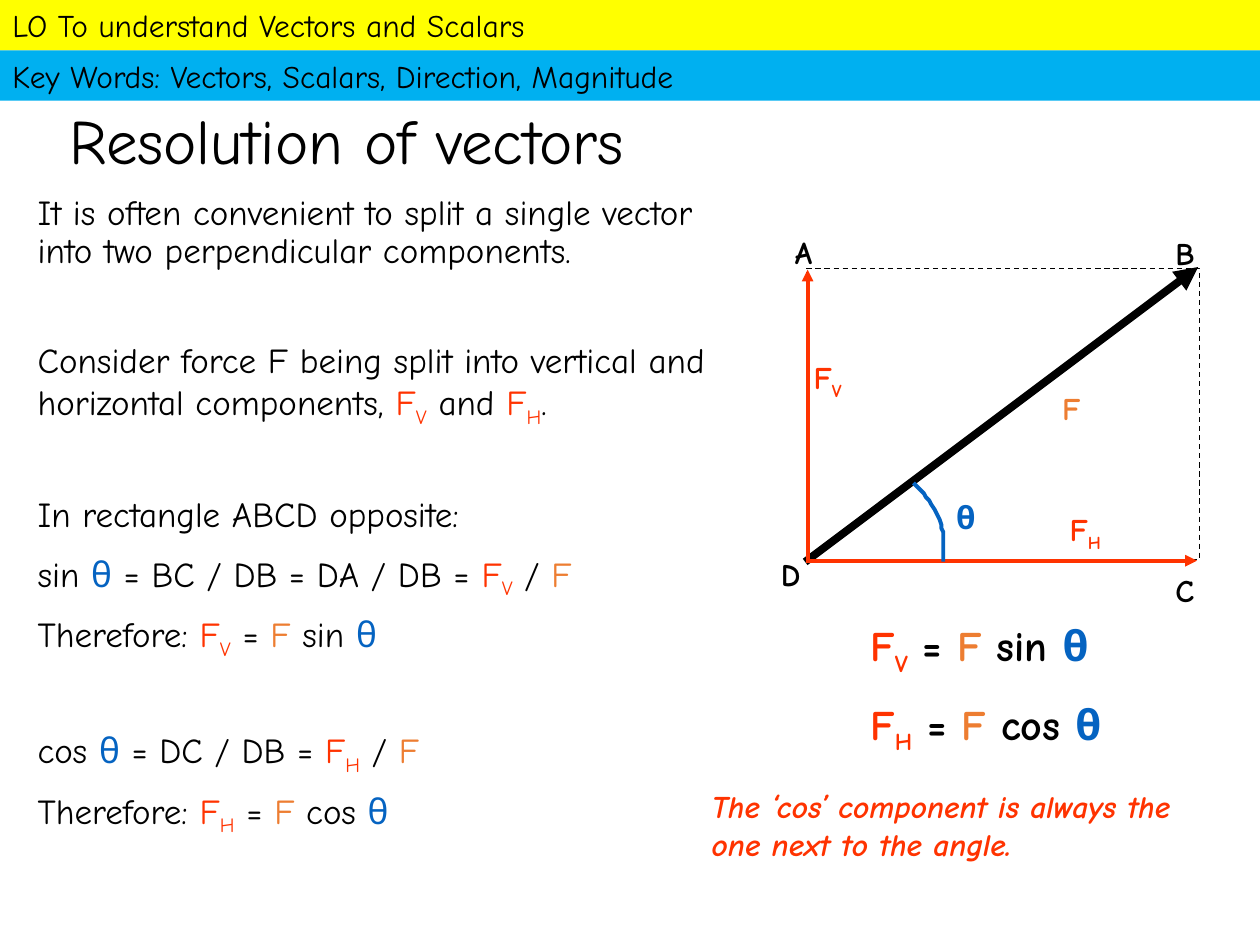
from dataclasses import dataclass
from typing import NamedTuple

import lxml.etree
import pptx
import pptx.dml.color
import pptx.enum.dml
import pptx.enum.shapes
import pptx.enum.text
import pptx.oxml.ns
import pptx.util

Pt = pptx.util.Pt


@dataclass(frozen=True)
class Theme:
    font: str = "Comic Neue"
    black: str = "000000"
    component: str = "FF3300"
    force: str = "ED7D31"
    angle: str = "0563C1"
    objective: str = "FFFF00"
    keywords: str = "00B0F0"
    title_size: float = 36
    formula_size: float = 24
    body_size: float = 20
    label_size: float = 18


THEME = Theme()


class Run(NamedTuple):
    text: str
    color: str = THEME.black
    sub: bool = False


class Para(NamedTuple):
    runs: list[Run]
    before: float = 0


class Box(NamedTuple):
    left: float
    top: float
    width: float
    height: float


class Arrow(NamedTuple):
    start: tuple[float, float]
    end: tuple[float, float]
    color: str
    width: float


class Label(NamedTuple):
    runs: list[Run]
    left: float
    top: float
    width: float


# Symbols shared by the text, the diagram and the formulas
F = Run("F", THEME.force)
THETA = Run("θ", THEME.angle)
F_V = [Run("F", THEME.component), Run("V", THEME.component, sub=True)]
F_H = [Run("F", THEME.component), Run("H", THEME.component, sub=True)]
EQUALS, SLASH = Run(" = "), Run(" / ")


def rgb(color: str):
    return pptx.dml.color.RGBColor.from_string(color)


def write(tf, paras: list[Para], size: float, bold: bool = False,
          italic: bool = False, spacing: float = 1.0) -> None:
    tf.word_wrap = True
    for i, para in enumerate(paras):
        p = tf.paragraphs[0] if i == 0 else tf.add_paragraph()
        p.alignment = pptx.enum.text.PP_ALIGN.LEFT
        p.line_spacing = spacing
        p.space_before = Pt(para.before)
        for run in para.runs:
            r = p.add_run()
            r.text = run.text
            r.font.name, r.font.size = THEME.font, Pt(size)
            r.font.bold, r.font.italic = bold, italic
            r.font.color.rgb = rgb(run.color)
            if run.sub:
                r._r.get_or_add_rPr().set("baseline", "-25000")


def add_text(s, box: Box, paras: list[Para], size: float, **style) -> None:
    write(s.shapes.add_textbox(*map(Pt, box)).text_frame, paras, size, **style)


def add_banner(s, top: float, fill: str, text: str) -> None:
    sp = s.shapes.add_shape(pptx.enum.shapes.MSO_SHAPE.RECTANGLE,
                            Pt(0), Pt(top), Pt(720), Pt(28.8))
    sp.shadow.inherit = False
    sp.fill.solid()
    sp.fill.fore_color.rgb = rgb(fill)
    sp.line.fill.background()
    sp.text_frame.vertical_anchor = pptx.enum.text.MSO_ANCHOR.TOP
    write(sp.text_frame, [Para([Run(text)])], THEME.label_size)


def add_arrow(s, arrow: Arrow) -> None:
    sp = s.shapes.add_connector(pptx.enum.shapes.MSO_CONNECTOR.STRAIGHT,
                                *map(Pt, arrow.start + arrow.end))
    sp.line.color.rgb = rgb(arrow.color)
    sp.line.width = Pt(arrow.width)
    qn = pptx.oxml.ns.qn
    lxml.etree.SubElement(sp.line._get_or_add_ln(), qn("a:tailEnd"), type="triangle")
    lxml.etree.SubElement(sp._element.spPr, qn("a:effectLst"))


def bezier(points, steps: int = 10) -> list[tuple[float, float]]:
    """Points along a cubic curve, without its start."""
    def at(t: float, axis: int) -> float:
        a, b, c, d = (pt[axis] for pt in points)
        u = 1 - t
        return u**3 * a + 3 * u * u * t * b + 3 * u * t * t * c + t**3 * d
    return [(at(i / steps, 0), at(i / steps, 1)) for i in range(1, steps + 1)]


def add_angle_arc(s) -> None:
    start, middle, end = (522, 276.5), (537.1, 297.4), (538.6, 321.1)
    points = (bezier([start, (528.5, 283), (534.2, 289.4), middle])
              + bezier([middle, (540, 304.6), (539.3, 312.5), end]))
    builder = s.shapes.build_freeform(*start, scale=Pt(1))
    builder.add_line_segments(points, close=False)
    sp = builder.convert_to_shape()
    sp.shadow.inherit = False
    sp.fill.background()
    sp.line.color.rgb = rgb(THEME.angle)
    sp.line.width = Pt(2.25)


def add_diagram(s) -> None:
    add_arrow(s, Arrow((460.1, 321.1), (684.7, 152.6), THEME.black, 4.5))
    # Rectangle ABCD
    sp = s.shapes.add_shape(pptx.enum.shapes.MSO_SHAPE.RECTANGLE,
                            *map(Pt, (460.8, 153.4, 224.6, 166.3)))
    sp.shadow.inherit = False
    sp.fill.background()
    sp.line.color.rgb = rgb(THEME.black)
    sp.line.width = Pt(0.75)
    sp.line.dash_style = pptx.enum.dml.MSO_LINE.DASH
    # Components and angle
    add_arrow(s, Arrow((461.5, 319.7), (461.5, 154.1), THEME.component, 2.25))
    add_arrow(s, Arrow((460.8, 320.4), (684, 320.4), THEME.component, 2.25))
    add_angle_arc(s)
    labels = [
        Label([F], 599.8, 218.9, 37.4), Label(F_V, 457.9, 200.9, 43.2),
        Label(F_H, 604.1, 288, 43.2), Label([THETA], 539.3, 280.8, 59.8),
        Label([Run("C")], 664.6, 322.6, 36), Label([Run("B")], 664.6, 130.3, 36),
        Label([Run("A")], 447.1, 129.6, 36), Label([Run("D")], 439.2, 313.9, 36),
    ]
    for label in labels:
        add_text(s, Box(label.left, label.top, label.width, 28.8),
                 [Para(label.runs)], THEME.label_size, bold=True)


def main() -> None:
    prs = pptx.Presentation()
    prs.slide_width, prs.slide_height = Pt(720), Pt(540)
    s = prs.slides.add_slide(prs.slide_layouts[5])

    # Banners and title
    add_banner(s, 0, THEME.objective, "LO To understand Vectors and Scalars")
    add_banner(s, 28.8, THEME.keywords,
               "Key Words: Vectors, Scalars, Direction, Magnitude")
    title = s.shapes.title
    title.left, title.top, title.width, title.height = map(Pt, (32.4, 49, 653, 67))
    title.text_frame.vertical_anchor = pptx.enum.text.MSO_ANCHOR.MIDDLE
    write(title.text_frame, [Para([Run("Resolution of vectors")])],
          THEME.title_size, spacing=0.9)

    # Explanation; a new section starts after a wide gap
    gap, section = 10, 41.7
    therefore = Run("Therefore: ")
    add_text(s, Box(14.4, 108, 407.5, 388.8), [
        Para([Run("It is often convenient to split a single vector into two "
                  "perpendicular components.")]),
        Para([Run("Consider force F being split into vertical and horizontal "
                  "components, "), *F_V, Run(" and "), *F_H, Run(".")], section),
        Para([Run("In rectangle ABCD opposite:")], section),
        Para([Run("sin "), THETA, Run(" = BC / DB = DA / DB = "), *F_V, SLASH, F], gap),
        Para([therefore, *F_V, EQUALS, F, Run(" sin "), THETA], gap),
        Para([Run("cos "), THETA, Run(" = DC / DB = "), *F_H, SLASH, F], section),
        Para([therefore, *F_H, EQUALS, F, Run(" cos "), THETA], gap),
    ], THEME.body_size, spacing=0.9)

    add_diagram(s)

    # Results
    add_text(s, Box(490.3, 350.6, 162, 108.7), [
        Para([*F_V, EQUALS, F, Run(" sin "), THETA]),
        Para([*F_H, EQUALS, F, Run(" cos "), THETA], 12),
    ], THEME.formula_size, bold=True)
    add_text(s, Box(399.6, 446.4, 293.8, 50.4), [
        Para([Run("The ‘cos’ component is always the one next to the angle.",
                  THEME.component)]),
    ], THEME.label_size, bold=True, italic=True)

    prs.save("out.pptx")


if __name__ == "__main__":
    main()
